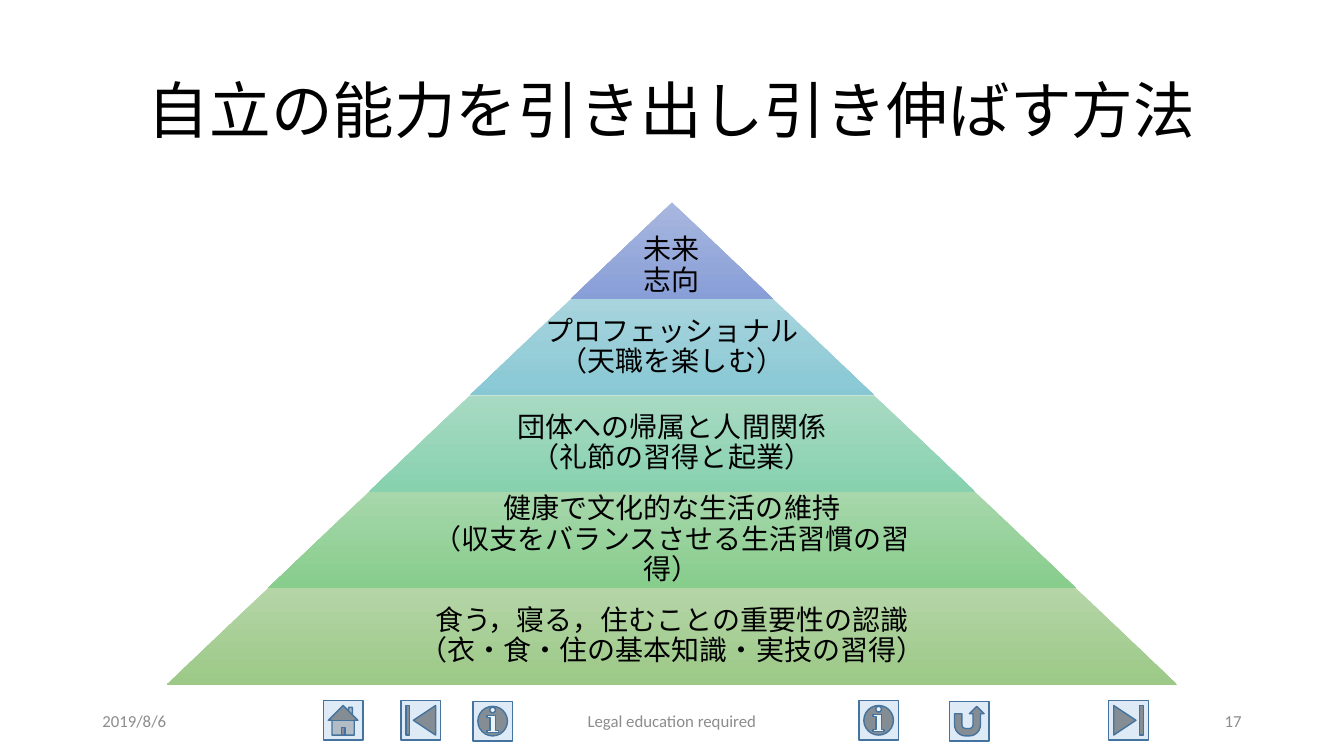
"""Build a slide with a five-tier pyramid, navigation buttons and a footer."""
from pptx import Presentation
from pptx import util as u
from pptx.dml.color import RGBColor
from pptx.enum import shapes, text

COLS, ROWS = 160, 90
UNIT = u.Inches(1 / 12)

BLACK = RGBColor(0x00, 0x00, 0x00)
GREY = RGBColor(0x8C, 0x8C, 0x8C)
BUTTON_FILL = RGBColor(0xDE, 0xEB, 0xF7)
BUTTON_LINE = RGBColor(0x43, 0x73, 0x9E)

PYRAMID_TOP = 24.1
TIER_HEIGHT = 11.48
TIER_STEP = 24.04
TEXT_SHARE = 0.65
TEXT_INSET = 0.36
TIP_INSET = 4

TIERS = [
    ("未来\v志向", RGBColor(0xA8, 0xB7, 0xDF), RGBColor(0x88, 0x9E, 0xD7)),
    ("プロフェッショナル\v（天職を楽しむ）",
     RGBColor(0xA8, 0xD4, 0xDD), RGBColor(0x88, 0xC8, 0xD4)),
    ("団体への帰属と人間関係\v（礼節の習得と起業）",
     RGBColor(0xA8, 0xDA, 0xC3), RGBColor(0x87, 0xD1, 0xAF)),
    ("健康で文化的な生活の維持\v（収支をバランスさせる生活習慣の習得）",
     RGBColor(0xA7, 0xD7, 0xAB), RGBColor(0x87, 0xCD, 0x8C)),
    ("食う，寝る，住むことの重要性の認識\v（衣・食・住の基本知識・実技の習得）",
     RGBColor(0xB5, 0xD5, 0xA7), RGBColor(0x9C, 0xC9, 0x87)),
]

SHAPE = shapes.MSO_SHAPE
BUTTONS = [
    (SHAPE.ACTION_BUTTON_HOME, 38.5, 83.4),
    (SHAPE.ACTION_BUTTON_BEGINNING, 47.75, 83.4),
    (SHAPE.ACTION_BUTTON_INFORMATION, 56.3, 83.5),
    (SHAPE.ACTION_BUTTON_INFORMATION, 102.25, 83.4),
    (SHAPE.ACTION_BUTTON_RETURN, 113.05, 83.5),
    (SHAPE.ACTION_BUTTON_END, 132, 83.4),
]

ALIGN = text.PP_ALIGN
FOOTER = [
    ("2019/8/6", 11, 36, ALIGN.LEFT),
    ("Legal education required", 53, 54, ALIGN.CENTER),
    ("17", 113, 36, ALIGN.RIGHT),
]


def grid(*cells):
    """Turn grid columns and rows into slide lengths."""
    return [round(cell * UNIT) for cell in cells]


def add_text(s, words, box, size, color=BLACK, align=ALIGN.CENTER, spacing=0.9):
    """Add a wrapped, vertically centred text box and return its frame."""
    tf = s.shapes.add_textbox(*grid(*box)).text_frame
    tf.word_wrap = True
    tf.vertical_anchor = text.MSO_ANCHOR.MIDDLE
    tf.text = words
    p = tf.paragraphs[0]
    p.alignment = align
    p.line_spacing = spacing
    p.font.name = "Calibri"
    p.font.size = u.Pt(size)
    p.font.color.rgb = color
    return tf


def add_button(s, kind, left, top):
    """Add one navigation button."""
    sp = s.shapes.add_shape(kind, *grid(left, top, 4.7, 4.7))
    sp.shadow.inherit = False
    sp.fill.solid()
    sp.fill.fore_color.rgb = BUTTON_FILL
    sp.line.color.rgb = BUTTON_LINE
    sp.line.width = u.Pt(1)


def add_tier(s, index, words, light, dark):
    """Add one pyramid tier with its centred text."""
    top = PYRAMID_TOP + index * TIER_HEIGHT
    width = (index + 1) * TIER_STEP
    sp = s.shapes.add_shape(
        SHAPE.TRAPEZOID, *grid((COLS - width) / 2, top, width, TIER_HEIGHT))
    sp.adjustments[0] = TIER_STEP / 2 / TIER_HEIGHT
    sp.shadow.inherit = False
    sp.line.fill.background()
    sp.fill.gradient()
    sp.fill.gradient_angle = 270
    for stop, color in zip(sp.fill.gradient_stops, (light, dark)):
        stop.color.rgb = color

    text_width = width * TEXT_SHARE if index else width
    box = ((COLS - text_width) / 2, top, text_width, TIER_HEIGHT)
    tf = add_text(s, words, box, 20)
    tf.margin_left, tf.margin_right, tf.margin_bottom = grid(*[TEXT_INSET] * 3)
    tf.margin_top = grid(TEXT_INSET if index else TIP_INSET)[0]


def main():
    """Build the slide and save it."""
    prs = Presentation()
    prs.slide_width, prs.slide_height = grid(COLS, ROWS)
    s = prs.slides.add_slide(prs.slide_layouts[6])
    for button in BUTTONS:
        add_button(s, *button)
    add_text(s, "自立の能力を引き出し引き伸ばす方法", (11, 4.8, 138, 17.4), 44)
    for words, left, width, align in FOOTER:
        add_text(s, words, (left, 83.4, width, 4.8), 12, GREY, align, 1.0)
    for index, tier in enumerate(TIERS):
        add_tier(s, index, *tier)
    prs.save("out.pptx")


if __name__ == "__main__":
    main()
